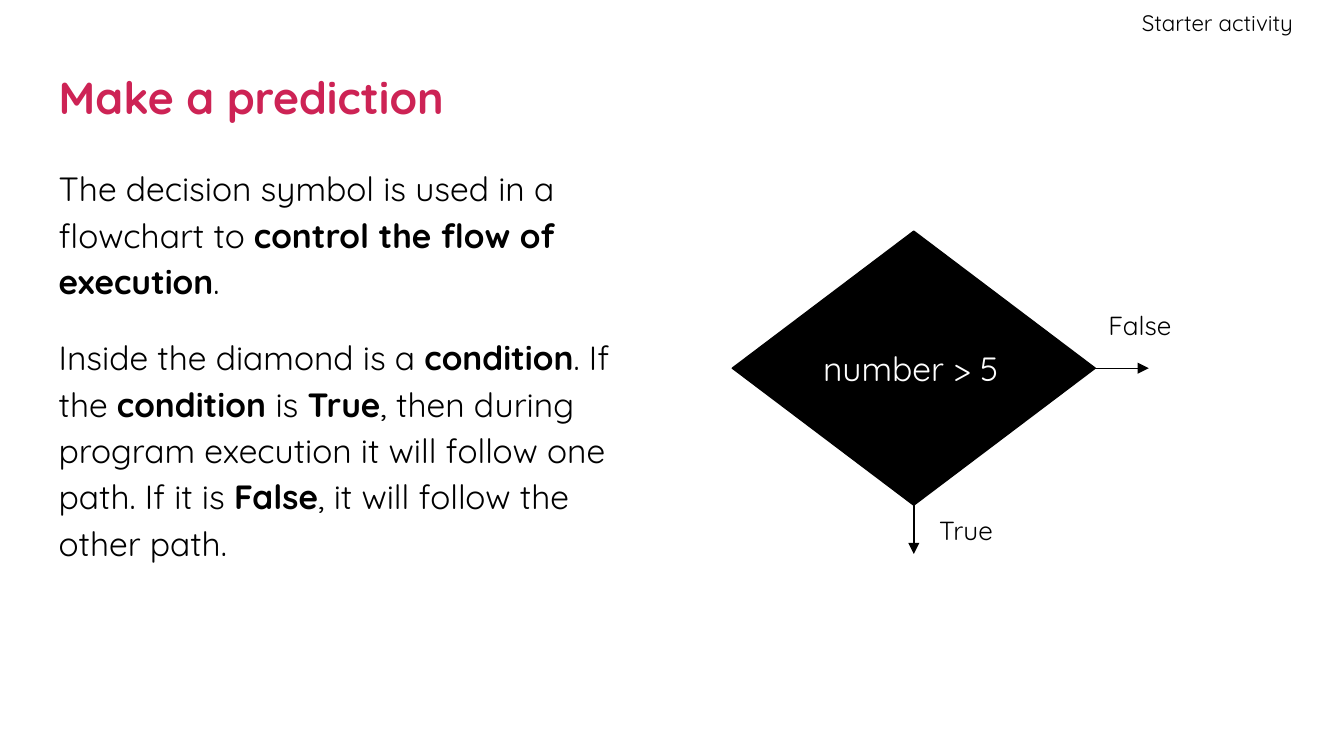
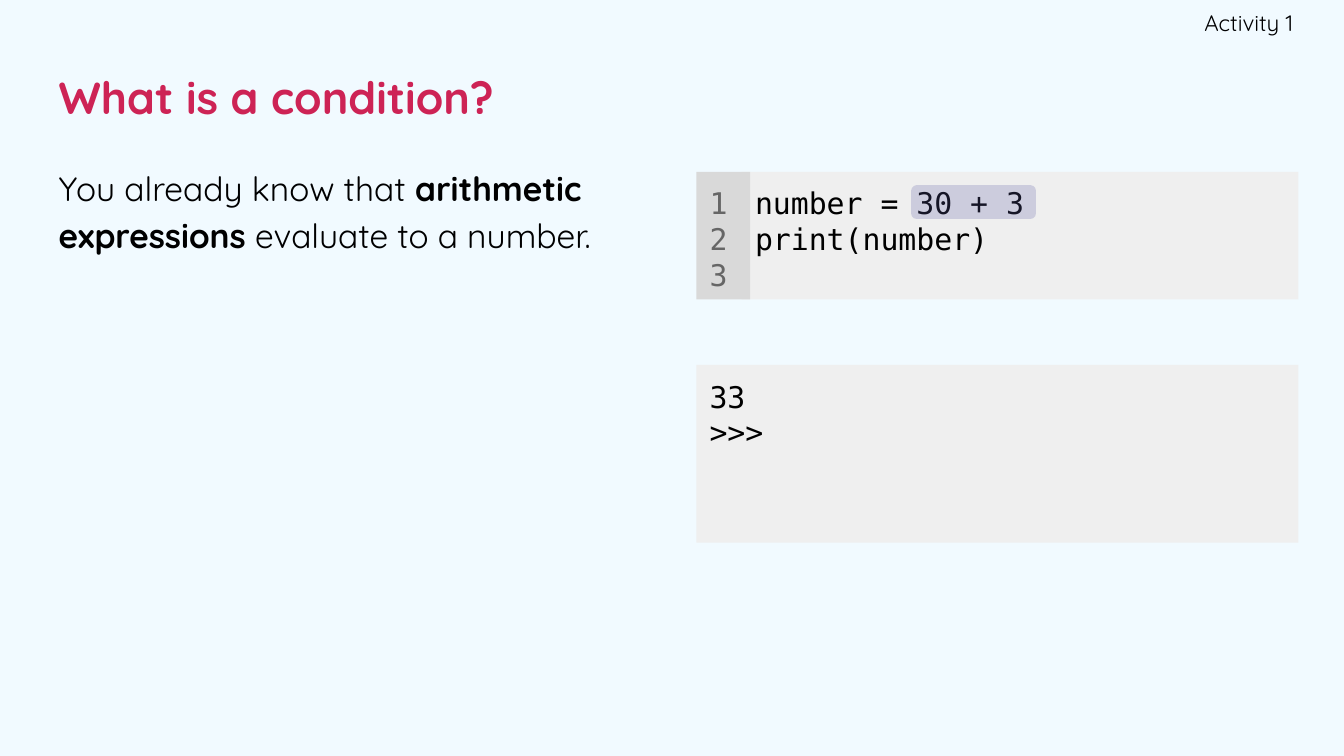
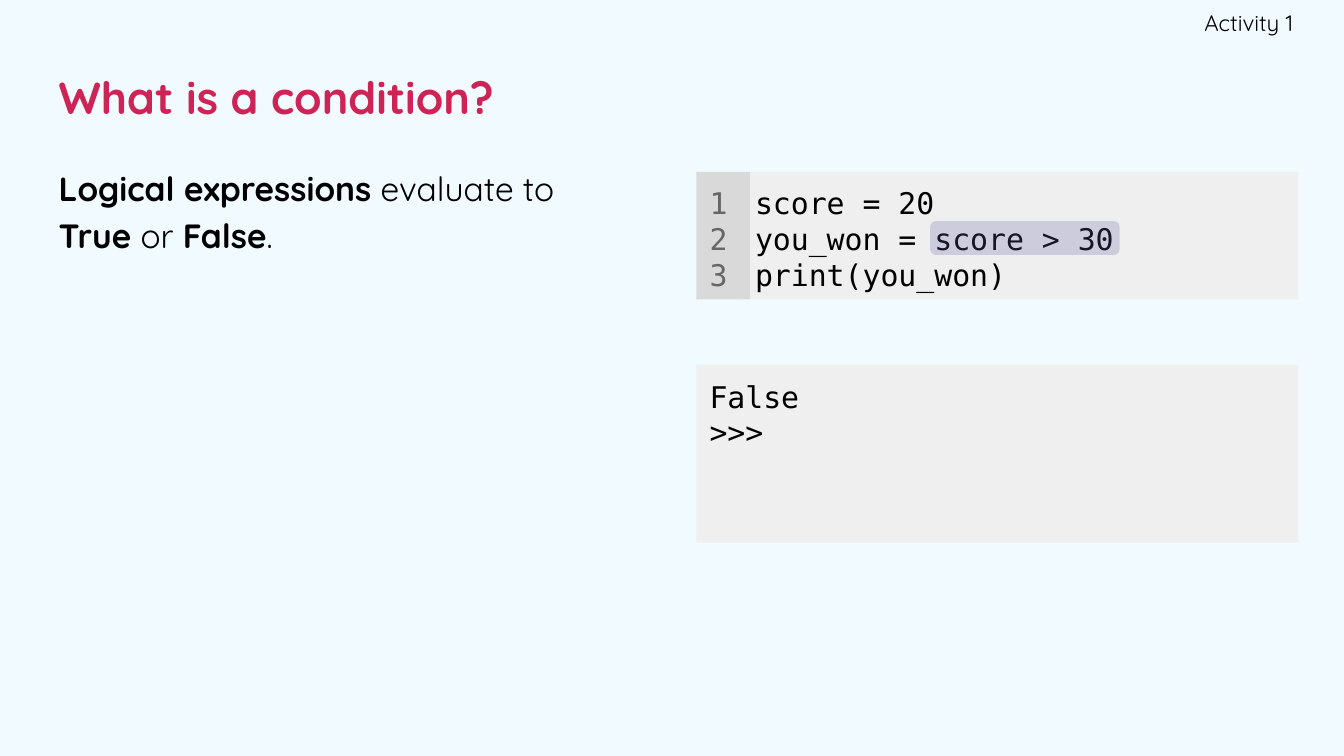
from lxml import etree
from pptx import Presentation
from pptx import util as u
from pptx.dml.color import RGBColor
from pptx.enum import shapes, text
from pptx.oxml import ns

COLOURS = {
    "ink": "000000", "paper": "FFFFFF", "activity": "F1FAFF", "title": "CD2355",
    "panel": "EFEFEF", "gutter": "D9D9D9", "line_number": "666666", "highlight": "5B5BA5",
}
BODY_FONT = "Quicksand"
CODE_FONT = "DejaVu Sans Mono"
INSET = 0.25
LEFT = 0.86
PANEL_LEFT, PANEL_WIDTH = 13.16, 11.38
CODE_TOP, CODE_HEIGHT = 3.25, 2.41
GUTTER_WIDTH = 1.02
CODE_LEFT = 14.02  # the gutter overlaps the left edge of the code panel
LINE_PITCH = 0.68


def colour(name):
    return RGBColor.from_string(COLOURS[name])


class Lesson:
    """Holds the deck, its style and the slide being built; lengths are in cm."""

    def __init__(self):
        self.deck = Presentation()
        self.deck.slide_width, self.deck.slide_height = u.Cm(25.4), u.Cm(14.29)
        self.slide = None

    def start(self, title, section, background):
        self.slide = self.deck.slides.add_slide(self.deck.slide_layouts[6])
        fill = self.slide.background.fill
        fill.solid()
        fill.fore_color.rgb = colour(background)
        self.label([f"**{title}**"], (LEFT, 0.86, 23.67, 1.93), 24, "title",
                   anchor=text.MSO_ANCHOR.MIDDLE)
        self.label([section], (19, 0, 5.44, 0.86), 12, align=text.PP_ALIGN.RIGHT,
                   anchor=text.MSO_ANCHOR.MIDDLE, insets=(INSET, INSET, 0, INSET))

    def set_text(self, frame, lines, size, ink="ink", font=BODY_FONT,
                 align=text.PP_ALIGN.LEFT, anchor=text.MSO_ANCHOR.TOP,
                 insets=(INSET,) * 4, spacing=None, gap=0):
        """Fill a text frame; parts between double asterisks are bold."""
        frame.word_wrap = True
        frame.vertical_anchor = anchor
        (frame.margin_left, frame.margin_top,
         frame.margin_right, frame.margin_bottom) = map(u.Cm, insets)
        for index, line in enumerate(lines):
            paragraph = frame.add_paragraph() if index else frame.paragraphs[0]
            paragraph.alignment = align
            paragraph.font.name, paragraph.font.size = font, u.Pt(size)
            paragraph.font.color.rgb = colour(ink)
            if spacing:
                paragraph.line_spacing = spacing
            if index and gap:
                paragraph.space_before = u.Pt(gap)
            for part, words in enumerate(line.split("**")):
                if words:
                    run = paragraph.add_run()
                    run.text = words
                    if part % 2:
                        run.font.bold = True

    def label(self, lines, box, size, ink="ink", **style):
        holder = self.slide.shapes.add_textbox(*map(u.Cm, box))
        self.set_text(holder.text_frame, lines, size, ink, **style)

    def body(self, *paragraphs):
        self.label(paragraphs, (LEFT, 2.82, 11.38, 10.16), 18, spacing=1.15, gap=16)

    def block(self, kind, box, fill, outline=None):
        block = self.slide.shapes.add_shape(kind, *map(u.Cm, box))
        block.shadow.inherit = False
        block.fill.solid()
        block.fill.fore_color.rgb = colour(fill)
        if outline:
            block.line.color.rgb = colour(outline)
            block.line.width = u.Pt(0.75)
        else:
            block.line.fill.background()
        return block

    def decision(self, condition, box):
        diamond = self.block(shapes.MSO_SHAPE.FLOWCHART_DECISION, box, "ink", "ink")
        self.set_text(diamond.text_frame, [condition], 18, "paper",
                      anchor=text.MSO_ANCHOR.MIDDLE, insets=(0,) * 4)

    def arrow(self, start, end):
        arrow = self.slide.shapes.add_connector(
            shapes.MSO_CONNECTOR.STRAIGHT, *map(u.Cm, start + end))
        arrow.line.color.rgb = colour("ink")
        arrow.line.width = u.Pt(0.75)
        properties = arrow._element.spPr
        etree.SubElement(properties.find(ns.qn("a:ln")), ns.qn("a:tailEnd"), type="triangle")
        etree.SubElement(properties, ns.qn("a:effectLst"))

    def code_panel(self, lines, box, fill="panel", ink="ink"):
        panel = self.block(shapes.MSO_SHAPE.RECTANGLE, box, fill)
        self.set_text(panel.text_frame, lines, 16, ink, CODE_FONT)

    def program(self, code, output):
        """Numbered source code above the output it prints."""
        code_width = PANEL_LEFT + PANEL_WIDTH - CODE_LEFT
        self.code_panel(code, (CODE_LEFT, CODE_TOP, code_width, CODE_HEIGHT))
        self.code_panel([output, ">>>"], (PANEL_LEFT, 6.9, PANEL_WIDTH, 3.36))
        self.code_panel("123", (PANEL_LEFT, CODE_TOP, GUTTER_WIDTH, CODE_HEIGHT),
                        "gutter", "line_number")

    def highlight(self, line_number, left, width):
        top = CODE_TOP + INSET + (line_number - 1) * LINE_PITCH
        marker = self.block(shapes.MSO_SHAPE.ROUNDED_RECTANGLE,
                            (left, top, width, 0.64), "highlight")
        tint = marker._element.spPr.find(".//" + ns.qn("a:srgbClr"))
        etree.SubElement(tint, ns.qn("a:alpha"), val="23000")


def prediction(lesson):
    lesson.start("Make a prediction", "Starter activity", "paper")
    left, top, width, height = 13.84, 4.37, 6.86, 5.18
    right, bottom = left + width, top + height
    centre, middle = left + width / 2, top + height / 2
    lesson.decision("number > 5", (left, top, width, height))
    lesson.arrow((centre, bottom), (centre, bottom + 0.92))
    lesson.arrow((right, middle), (right + 1.01, middle))
    lesson.label(["True"], (17.5, 9.48, 1.83, 1.07), 14)
    lesson.label(["False"], (right, 5.59, 1.83, 1.07), 14)
    lesson.body(
        "The decision symbol is used in a flowchart to **control the flow of execution**.",
        "Inside the diamond is a **condition**. If the **condition **is **True**, then during "
        "program execution it will follow one path. If it is **False**, it will follow "
        "the other path.")


def condition(lesson, explanation, code, output, marked):
    lesson.start("What is a condition?", "Activity 1", "activity")
    lesson.body(explanation)
    lesson.program(code, output)
    lesson.highlight(*marked)


def main():
    lesson = Lesson()
    prediction(lesson)
    condition(lesson,
              "You already know that **arithmetic expressions** evaluate to a number.",
              ["number = 30 + 3", "print(number)"], "33", (1, 17.22, 2.36))
    condition(lesson,
              "**Logical expressions** evaluate to **True** or **False**.",
              ["score = 20", "you_won = score > 30", "print(you_won)"], "False",
              (2, 17.58, 3.58))
    lesson.deck.save("out.pptx")


if __name__ == "__main__":
    main()
